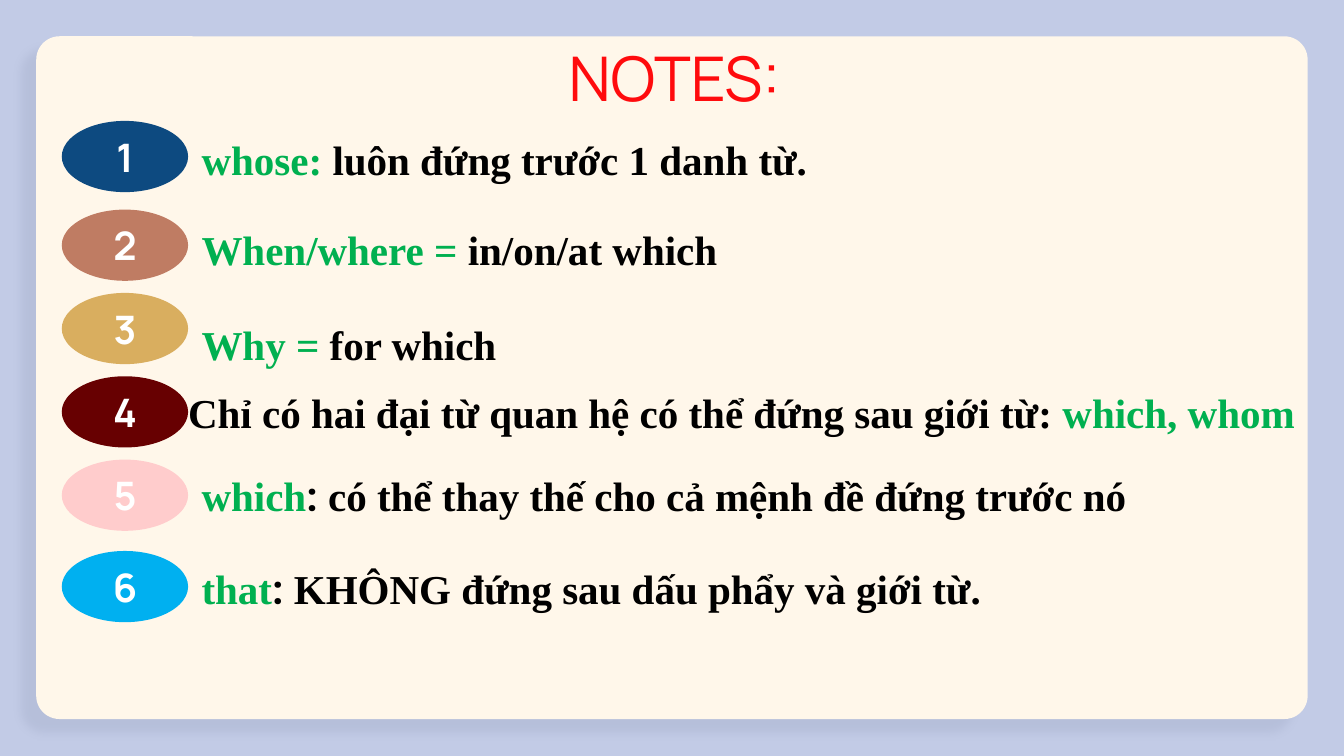
"""Builds a grammar notes slide about relative pronouns."""
from lxml import etree
from pptx import Presentation
from pptx import util as u
from pptx.dml import color
from pptx.enum import shapes, text
from pptx.oxml import ns

GREEN, BLACK, WHITE = "00B050", "000000", "FFFFFF"
SERIF, SANS, DISPLAY = "Times New Roman", "Roboto", "Manrope"
BADGE_LEFT, BADGE_WIDTH, BADGE_HEIGHT = 0.46, 0.94, 0.53
NOTE_LEFT, NOTE_WIDTH = 1.5, 7.83

# badge top, badge colour, note left, note top, note width, (words, colour, font)
NOTES = [
    (0.9, "0D4A80", NOTE_LEFT, 1.0, NOTE_WIDTH,
     [("whose: ", GREEN, SERIF), ("luôn đứng trước 1 danh từ.", BLACK, SERIF)]),
    (1.56, "BF7C63", NOTE_LEFT, 1.67, NOTE_WIDTH,
     [("When/where = ", GREEN, SERIF), ("in/on/at which", BLACK, SERIF)]),
    (2.18, "D9AE5F", NOTE_LEFT, 2.38, NOTE_WIDTH,
     [("Why = ", GREEN, SERIF), ("for which", BLACK, SERIF)]),
    (2.8, "670001", 1.4, 2.88, 8.36,
     [("Chỉ có hai đại từ quan hệ có thể đứng sau giới từ: ", BLACK, SERIF),
      ("which, whom", GREEN, SERIF)]),
    (3.42, "FFCCCC", NOTE_LEFT, 3.5, NOTE_WIDTH,
     [("which", GREEN, SERIF), (": ", BLACK, SANS),
      ("có thể thay thế cho cả mệnh đề đứng trước nó", BLACK, SERIF)]),
    (4.1, "00B0F0", NOTE_LEFT, 4.19, NOTE_WIDTH,
     [("that", GREEN, SERIF), (": ", BLACK, SANS),
      ("KHÔNG đứng sau dấu phẩy và giới từ.", BLACK, SERIF)]),
]


def rgb(value):
    """Turn a hex string into a colour."""
    return color.RGBColor.from_string(value)


def box(left, top, width, height):
    """Give a position and size in inches."""
    return [u.Inches(length) for length in (left, top, width, height)]


def add_filled(slide, preset, place, fill):
    """Add a preset shape with a plain fill and no outline."""
    shape = slide.shapes.add_shape(preset, *box(*place))
    shape.shadow.inherit = False
    shape.fill.solid()
    shape.fill.fore_color.rgb = rgb(fill)
    shape.line.fill.background()
    return shape


def add_soft_shadow(shape, tint, alpha, blur, distance, angle):
    """Give a shape a blurred outer shadow."""
    effects = shape._element.spPr.find(ns.qn("a:effectLst"))
    shadow = etree.SubElement(
        effects, ns.qn("a:outerShdw"), blurRad=str(u.Pt(blur)),
        dist=str(u.Pt(distance)), dir=str(angle * 60000),
        algn="bl", rotWithShape="0")
    shade = etree.SubElement(shadow, ns.qn("a:srgbClr"), val=tint)
    etree.SubElement(shade, ns.qn("a:alpha"), val=str(alpha * 1000))


def add_words(slide, place, parts, size, bold=True, anchor=text.MSO_ANCHOR.TOP,
              align=text.PP_ALIGN.LEFT, space_after=0):
    """Add one paragraph made of (words, colour, font) parts."""
    frame = slide.shapes.add_textbox(*box(*place)).text_frame
    frame.word_wrap = True
    frame.vertical_anchor = anchor
    frame.margin_left = frame.margin_right = 0
    frame.margin_top = frame.margin_bottom = 0
    paragraph = frame.paragraphs[0]
    paragraph.alignment = align
    paragraph.space_after = u.Pt(space_after)
    for words, tint, face in parts:
        run = paragraph.add_run()
        run.text = words
        run.font.name = face
        run.font.size = u.Pt(size)
        run.font.bold = bold
        run.font.color.rgb = rgb(tint)


def add_badge(slide, number, top, fill):
    """Add a numbered oval."""
    add_filled(slide, shapes.MSO_SHAPE.OVAL,
               (BADGE_LEFT, top, BADGE_WIDTH, BADGE_HEIGHT), fill)
    add_words(slide, (BADGE_LEFT + 0.11, top, 0.72, BADGE_HEIGHT),
              [(str(number), WHITE, DISPLAY)], 21,
              anchor=text.MSO_ANCHOR.MIDDLE, align=text.PP_ALIGN.CENTER)


def add_card(slide):
    """Add the rounded card behind the notes."""
    card = add_filled(slide, shapes.MSO_SHAPE.ROUNDED_RECTANGLE,
                      (0.27, 0.27, 9.46, 5.08), "FFF7EA")
    card.adjustments[0] = 0.034
    add_soft_shadow(card, "515B7A", alpha=10, blur=4.5, distance=10.5, angle=137)


def main():
    """Build and save the slide."""
    deck = Presentation()
    deck.slide_width = u.Inches(10)
    deck.slide_height = u.Inches(10) * 9 // 16
    slide = deck.slides.add_slide(deck.slide_layouts[6])
    slide.background.fill.solid()
    slide.background.fill.fore_color.rgb = rgb("C2CBE6")

    add_card(slide)
    add_words(slide, (0.8, 0.22, 8.44, 0.63), [("NOTES:", "FF0B0D", DISPLAY)], 33,
              bold=False, anchor=text.MSO_ANCHOR.BOTTOM, align=text.PP_ALIGN.CENTER)
    for number, (badge_top, fill, left, top, width, parts) in enumerate(NOTES, 1):
        add_badge(slide, number, badge_top, fill)
        add_words(slide, (left, top, width, 0.36), parts, 22, space_after=12)
    deck.save("out.pptx")


if __name__ == "__main__":
    main()
